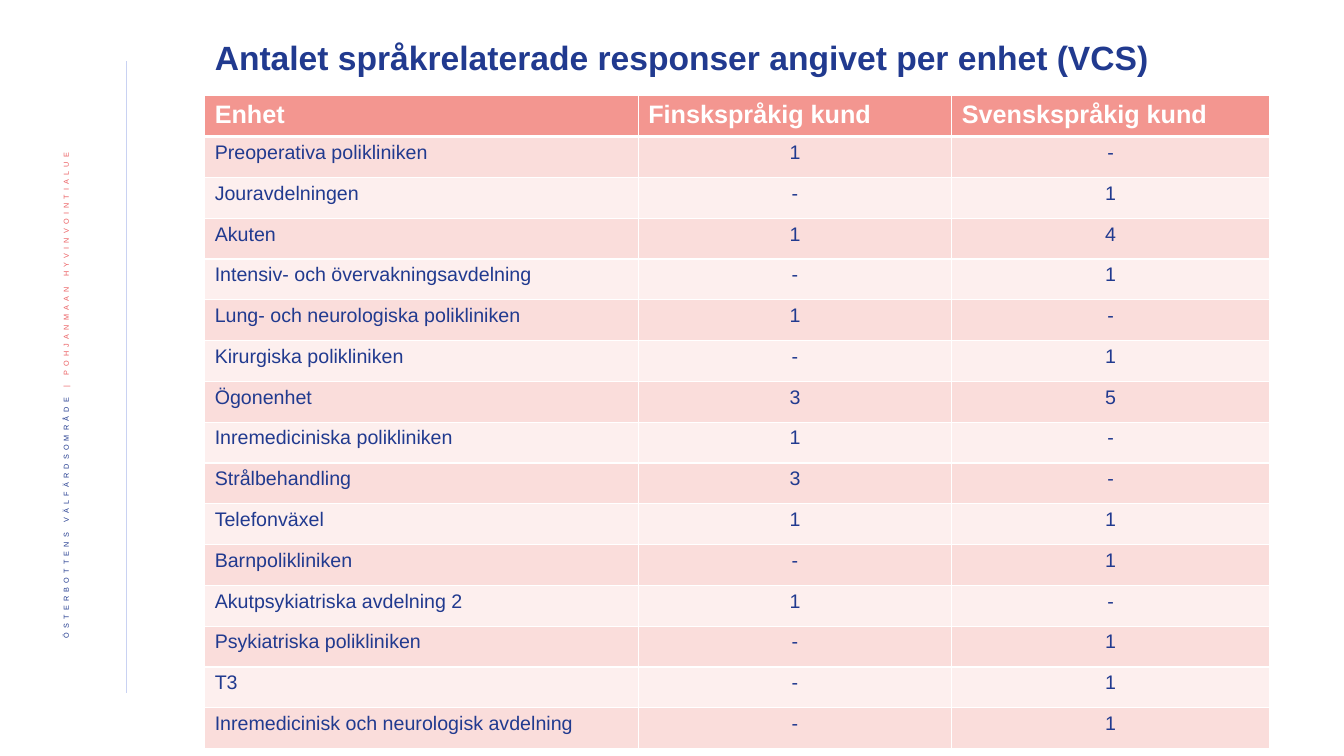
from lxml import etree
from pptx import Presentation
from pptx import util as u
from pptx.dml.color import RGBColor
from pptx.enum import shapes, text
from pptx.oxml.ns import qn

NAVY = RGBColor(0x21, 0x3A, 0x8F)
CORAL = RGBColor(0xEB, 0x5C, 0x5F)
PALE_BLUE = RGBColor(0xC9, 0xD2, 0xF2)
WHITE = RGBColor(0xFF, 0xFF, 0xFF)
HEADER_FILL = RGBColor(0xF3, 0x96, 0x90)
BAND_FILLS = (RGBColor(0xFA, 0xDD, 0xDB), RGBColor(0xFD, 0xEF, 0xEE))

HEADER = ("Enhet", "Finskspråkig kund", "Svenskspråkig kund")
UNITS = (
    ("Preoperativa polikliniken", "1", "-"),
    ("Jouravdelningen", "-", "1"),
    ("Akuten", "1", "4"),
    ("Intensiv- och övervakningsavdelning", "-", "1"),
    ("Lung- och neurologiska polikliniken", "1", "-"),
    ("Kirurgiska polikliniken", "-", "1"),
    ("Ögonenhet", "3", "5"),
    ("Inremediciniska polikliniken", "1", "-"),
    ("Strålbehandling", "3", "-"),
    ("Telefonväxel", "1", "1"),
    ("Barnpolikliniken", "-", "1"),
    ("Akutpsykiatriska avdelning 2", "1", "-"),
    ("Psykiatriska polikliniken", "-", "1"),
    ("T3", "-", "1"),
    ("Inremedicinisk och neurologisk avdelning", "-", "1"),
)


class SlideBuilder:
    font_name = "Arial"

    def __init__(self, presentation):
        self.slide = presentation.slides.add_slide(presentation.slide_layouts[5])

    def style_font(self, font, size, color, bold=False):
        font.name = self.font_name
        font.size = u.Pt(size)
        font.bold = bold
        font.color.rgb = color

    def title(self, wording, left, top, width, height):
        shape = self.slide.shapes.title
        shape.left, shape.top = u.Inches(left), u.Inches(top)
        shape.width, shape.height = u.Inches(width), u.Inches(height)
        frame = shape.text_frame
        frame.text = wording
        frame.word_wrap = True
        frame.auto_size = text.MSO_AUTO_SIZE.NONE
        frame.vertical_anchor = text.MSO_ANCHOR.MIDDLE
        paragraph = frame.paragraphs[0]
        paragraph.alignment = text.PP_ALIGN.LEFT
        paragraph.line_spacing = 0.9
        self.style_font(paragraph.runs[0].font, 24, NAVY, True)

    def line(self, x, top, bottom):
        connector = self.slide.shapes.add_connector(
            shapes.MSO_CONNECTOR.STRAIGHT,
            u.Inches(x), u.Inches(top), u.Inches(x), u.Inches(bottom))
        connector.line.color.rgb = PALE_BLUE
        connector.line.width = u.Pt(0.5)
        etree.SubElement(connector._element.spPr, qn("a:effectLst"))

    def vertical_text(self, parts, left, top, width, height):
        shape = self.slide.shapes.add_textbox(
            u.Inches(left), u.Inches(top), u.Inches(width), u.Inches(height))
        frame = shape.text_frame
        frame.word_wrap = True
        frame.vertical_anchor = text.MSO_ANCHOR.MIDDLE
        frame._txBody.bodyPr.set("vert", "vert270")
        paragraph = frame.paragraphs[0]
        paragraph.alignment = text.PP_ALIGN.RIGHT
        paragraph.line_spacing = 0.9
        for wording, color in parts:
            run = paragraph.add_run()
            run.text = wording
            self.style_font(run.font, 9, color)
            properties = run._r.get_or_add_rPr()
            properties.set("baseline", "30000")
            properties.set("spc", "300")

    def cell_borders(self, cell, widths):
        properties = cell._tc.get_or_add_tcPr()
        for side, width in widths.items():
            border = etree.SubElement(properties, qn(f"a:ln{side}"), w=str(u.Pt(width)))
            fill = etree.SubElement(border, qn("a:solidFill"))
            etree.SubElement(fill, qn("a:srgbClr"), val=str(WHITE))

    def table(self, rows, left, top, column_widths, row_height):
        table = self.slide.shapes.add_table(
            len(rows), len(column_widths), u.Inches(left), u.Inches(top),
            u.Inches(sum(column_widths)), u.Inches(row_height * len(rows))).table
        for column, width in zip(table.columns, column_widths):
            column.width = u.Inches(width)
        for row_index, values in enumerate(rows):
            is_header = row_index == 0
            table.rows[row_index].height = u.Inches(row_height)
            widths = {"L": 1, "R": 1, "T": 3 if row_index == 1 else 1,
                      "B": 3 if is_header else 1}
            for column_index, value in enumerate(values):
                cell = table.cell(row_index, column_index)
                self.cell_borders(cell, widths)
                cell.fill.solid()
                cell.fill.fore_color.rgb = (
                    HEADER_FILL if is_header else BAND_FILLS[(row_index - 1) % 2])
                cell.text_frame.text = value
                paragraph = cell.text_frame.paragraphs[0]
                if column_index and not is_header:
                    paragraph.alignment = text.PP_ALIGN.CENTER
                self.style_font(paragraph.runs[0].font, 18 if is_header else 14,
                                WHITE if is_header else NAVY, is_header)


def main():
    presentation = Presentation()
    presentation.slide_width = u.Inches(13.33)
    presentation.slide_height = u.Inches(7.5)
    builder = SlideBuilder(presentation)
    builder.line(1.25, 0.61, 6.88)
    builder.vertical_text(
        (("ÖSTERBOTTENS VÄLFÄRDSOMRÅDE ", NAVY), ("| POHJANMAAN HYVINVOINTIALUE", CORAL)),
        0.42, 1.42, 0.52, 5.73)
    builder.title("Antalet språkrelaterade responser angivet per enhet (VCS)",
                  2.03, 0.23, 10.2, 0.72)
    builder.table((HEADER, *UNITS), 2.03, 0.95, (4.3, 3.11, 3.15), 6.48 / 16)
    presentation.save("out.pptx")


if __name__ == "__main__":
    main()
